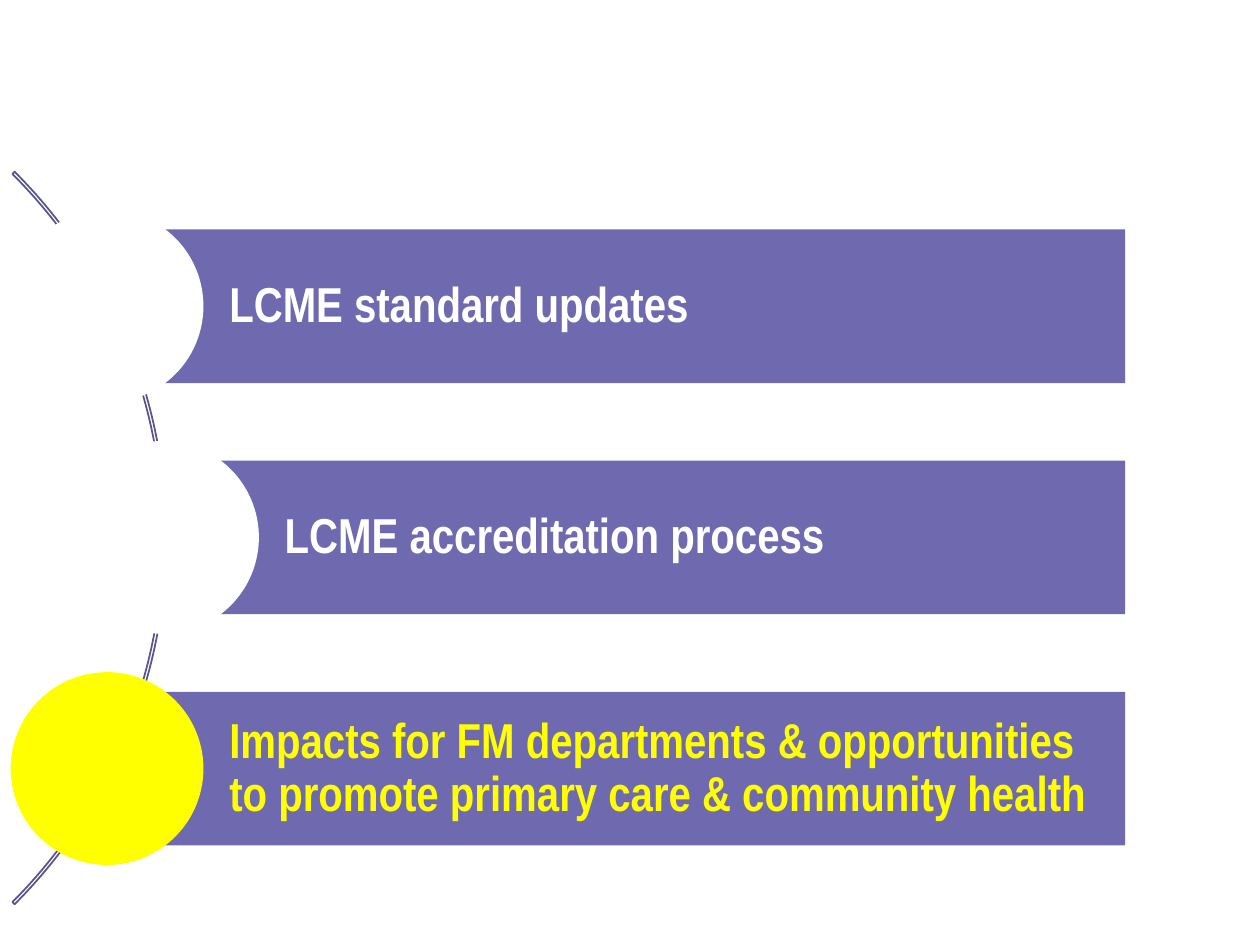
"""Build an agenda slide of three bars along an arc, the last one highlighted."""
from pptx import Presentation
from pptx.dml.color import RGBColor
from pptx.enum.shapes import MSO_SHAPE
from pptx.enum.text import MSO_ANCHOR, PP_ALIGN
from pptx.util import Inches, Pt

PURPLE = RGBColor(0x6F, 0x69, 0xAF)
DARK_PURPLE = RGBColor(0x59, 0x54, 0x8C)
WHITE = RGBColor(0xFF, 0xFF, 0xFF)
YELLOW = RGBColor(0xFF, 0xFF, 0x00)

BAR_RIGHT = 8.93
BAR_HEIGHT = 1.22
CIRCLE_SIZE = 1.53
FIRST_CENTER = 2.43
PITCH = 1.835

ITEMS = [
    ("LCME standard updates", 0.85, WHITE),
    ("LCME accreditation process", 1.29, WHITE),
    ("Impacts for FM departments & opportunities "
     "to promote primary care & community health", 0.85, YELLOW),
]


class AgendaSlide:
    def __init__(self, prs, font="Arial Narrow", size=28):
        self.s = prs.slides.add_slide(prs.slide_layouts[6])
        self.font = font
        self.size = size

    def shape(self, kind, left, top, width, height, fill=None):
        sp = self.s.shapes.add_shape(
            kind, Inches(left), Inches(top), Inches(width), Inches(height))
        sp.shadow.inherit = False
        sp.line.fill.background()
        if fill is None:
            sp.fill.background()
        else:
            sp.fill.solid()
            sp.fill.fore_color.rgb = fill
        return sp

    def arc(self, left, top, size, color):
        sp = self.shape(MSO_SHAPE.BLOCK_ARC, left, top, size, size)
        for i, value in enumerate((189, 27, 0.003)):
            sp.adjustments[i] = value
        sp.line.color.rgb = color
        sp.line.width = Pt(1)

    def bar(self, text, left, center, color):
        sp = self.shape(MSO_SHAPE.RECTANGLE, left, center - BAR_HEIGHT / 2,
                        BAR_RIGHT - left, BAR_HEIGHT, PURPLE)
        tf = sp.text_frame
        tf.text = text
        tf.word_wrap = True
        tf.vertical_anchor = MSO_ANCHOR.MIDDLE
        tf.margin_left = Inches(0.97)
        tf.margin_top = tf.margin_right = tf.margin_bottom = Inches(0.08)
        p = tf.paragraphs[0]
        p.alignment = PP_ALIGN.LEFT
        p.line_spacing = 0.9
        font = p.runs[0].font
        font.name = self.font
        font.size = Pt(self.size)
        font.bold = True
        font.color.rgb = color

    def circle(self, center_x, center_y, color):
        self.shape(MSO_SHAPE.OVAL, center_x - CIRCLE_SIZE / 2,
                   center_y - CIRCLE_SIZE / 2, CIRCLE_SIZE, CIRCLE_SIZE, color)


def main():
    prs = Presentation()
    prs.slide_width = Inches(10)
    prs.slide_height = Inches(7.5)
    agenda = AgendaSlide(prs)
    agenda.arc(-6.9, 0.16, 8.22, DARK_PURPLE)
    for i, (text, left, color) in enumerate(ITEMS):
        center = FIRST_CENTER + i * PITCH
        agenda.bar(text, left, center, color)
        agenda.circle(left, center, color)
    prs.save("out.pptx")


if __name__ == "__main__":
    main()
